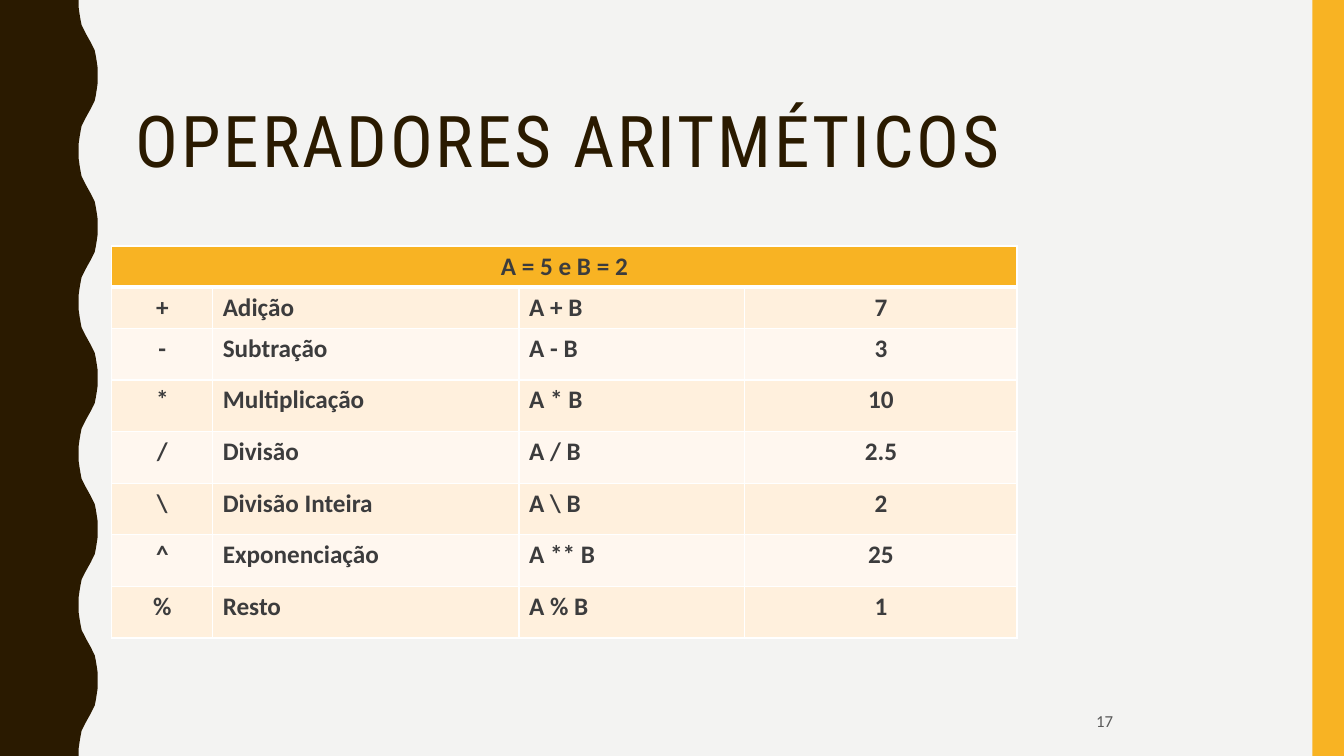
from lxml import etree
from pptx import Presentation
from pptx import util as u
from pptx.dml import color
from pptx.enum import shapes, text
from pptx.oxml import ns

COLORS = {
    "paper": "F3F3F2",
    "brown": "2A1A00",
    "amber": "F8B323",
    "band_dark": "FFF0DD",
    "band_light": "FFF7EF",
    "ink": "3C3C3D",
    "grey": "595959",
    "white": "FFFFFF",
}
COLUMNS, ROWS = 160, 90
LEFT, CENTER = text.PP_ALIGN.LEFT, text.PP_ALIGN.CENTER

WAVE_PERIOD = 18
WAVE_CENTER = 10.5
WAVE_QUARTER = [(9.36, 0), (9.36, 0.84), (9.48, 1.68), (9.6, 2.4),
                (9.72, 3), (9.96, 3.48), (10.2, 3.96), (10.5, 4.5)]

TABLE_TITLE = "A = 5 e B = 2"
OPERATORS = [
    ("+", "Adição", "A + B", "7"),
    ("-", "Subtração", "A - B", "3"),
    ("*", "Multiplicação", "A * B", "10"),
    ("/", "Divisão", "A / B", "2.5"),
    ("\\", "Divisão Inteira", "A \\ B", "2"),
    ("^", "Exponenciação", "A ** B", "25"),
    ("%", "Resto", "A % B", "1"),
]
COLUMN_ALIGN = [CENTER, LEFT, LEFT, CENTER]
COLUMN_WIDTHS = [12, 36.48, 26.88, 32.4]
ROW_HEIGHTS = [4.9] * 2 + [6.15] * 6


def rgb(name):
    return color.RGBColor.from_string(COLORS[name])


def wave_edge():
    half = WAVE_QUARTER + [(2 * WAVE_CENTER - x, WAVE_PERIOD / 2 - y)
                           for x, y in WAVE_QUARTER[-2::-1]]
    period = half + [(x, WAVE_PERIOD - y) for x, y in half[-2::-1]]
    return [(x, y + top) for top in range(0, ROWS, WAVE_PERIOD) for x, y in period]


class Deck:
    def __init__(self):
        self.prs = Presentation()
        self.prs.slide_width, self.prs.slide_height = u.Inches(40 / 3), u.Inches(7.5)
        self.s = self.prs.slides.add_slide(self.prs.slide_layouts[6])
        fill = self.s.background.fill
        fill.solid()
        fill.fore_color.rgb = rgb("paper")

    def x(self, columns):
        return u.Emu(round(self.prs.slide_width * columns / COLUMNS))

    def y(self, rows):
        return u.Emu(round(self.prs.slide_height * rows / ROWS))

    def box(self, left, top, width, height):
        return self.x(left), self.y(top), self.x(width), self.y(height)

    def paint(self, sp, fill):
        sp.shadow.inherit = False
        sp.fill.solid()
        sp.fill.fore_color.rgb = rgb(fill)
        sp.line.fill.background()

    def rect(self, area, fill):
        sp = self.s.shapes.add_shape(shapes.MSO_SHAPE.RECTANGLE, *self.box(*area))
        self.paint(sp, fill)

    def outline(self, points, fill):
        first, *rest = [(self.x(x), self.y(y)) for x, y in points]
        builder = self.s.shapes.build_freeform(*first)
        builder.add_line_segments(rest, close=True)
        self.paint(builder.convert_to_shape(), fill)

    def style(self, tf, words, font, size, ink, align=LEFT, bold=False):
        tf.text = words
        p = tf.paragraphs[0]
        p.alignment = align
        r = p.runs[0]
        r.font.name, r.font.size, r.font.bold = font, u.Pt(size), bold
        r.font.color.rgb = rgb(ink)
        return p

    def text(self, area, words, font, size, ink, anchor, align=LEFT,
             side_inset=0.1, spacing=None):
        tf = self.s.shapes.add_textbox(*self.box(*area)).text_frame
        tf.word_wrap = True
        tf.vertical_anchor = anchor
        tf.margin_left = tf.margin_right = u.Inches(side_inset)
        tf.margin_top = tf.margin_bottom = u.Inches(0.05)
        p = self.style(tf, words, font, size, ink, align)
        p.line_spacing = 0.9
        if spacing:
            p.runs[0]._r.get_or_add_rPr().set("spc", str(spacing * 100))

    def borders(self, cell, **widths):
        tcPr = cell._tc.get_or_add_tcPr()
        for side in "LRTB":
            width = u.Pt(widths.get(side, 1))
            ln = etree.SubElement(tcPr, ns.qn("a:ln" + side), w=str(int(width)))
            fill = etree.SubElement(ln, ns.qn("a:solidFill"))
            etree.SubElement(fill, ns.qn("a:srgbClr"), val=COLORS["white"])

    def cell(self, cell, words, fill, align, **widths):
        self.borders(cell, **widths)
        cell.fill.solid()
        cell.fill.fore_color.rgb = rgb(fill)
        if words:
            self.style(cell.text_frame, words, "Calibri", 18, "ink", align, True)

    def table(self, left, top, title, records):
        area = self.box(left, top, sum(COLUMN_WIDTHS), sum(ROW_HEIGHTS))
        table = self.s.shapes.add_table(len(ROW_HEIGHTS), len(COLUMN_WIDTHS), *area).table
        table.first_row = table.horz_banding = False
        for column, width in zip(table.columns, COLUMN_WIDTHS):
            column.width = self.x(width)
        for row, height in zip(table.rows, ROW_HEIGHTS):
            row.height = self.y(height)
        table.cell(0, 0).merge(table.cell(0, len(COLUMN_WIDTHS) - 1))
        for c in range(len(COLUMN_WIDTHS)):
            self.cell(table.cell(0, c), "" if c else title, "amber", CENTER, B=3)
        for i, record in enumerate(records, 1):
            band = "band_dark" if i % 2 else "band_light"
            for c, (words, align) in enumerate(zip(record, COLUMN_ALIGN)):
                self.cell(table.cell(i, c), words, band, align, T=3 if i == 1 else 1)


def main():
    deck = Deck()
    deck.outline([(0, 0), *wave_edge(), (0, ROWS)], "brown")
    deck.rect((156.24, 0, 3.76, ROWS), "amber")
    deck.text((15, 4.92, 127.2, 17.4), "OPERADORES ARITMÉTICOS", "Roboto Condensed",
              51, "brown", text.MSO_ANCHOR.BOTTOM, spacing=2)
    deck.text((113.04, 83.64, 36.96, 4.56), "17", "Calibri", 12, "grey",
              text.MSO_ANCHOR.MIDDLE, CENTER, side_inset=0.05)
    deck.table(13.32, 29.28, TABLE_TITLE, OPERATORS)
    deck.prs.save("out.pptx")


if __name__ == "__main__":
    main()
